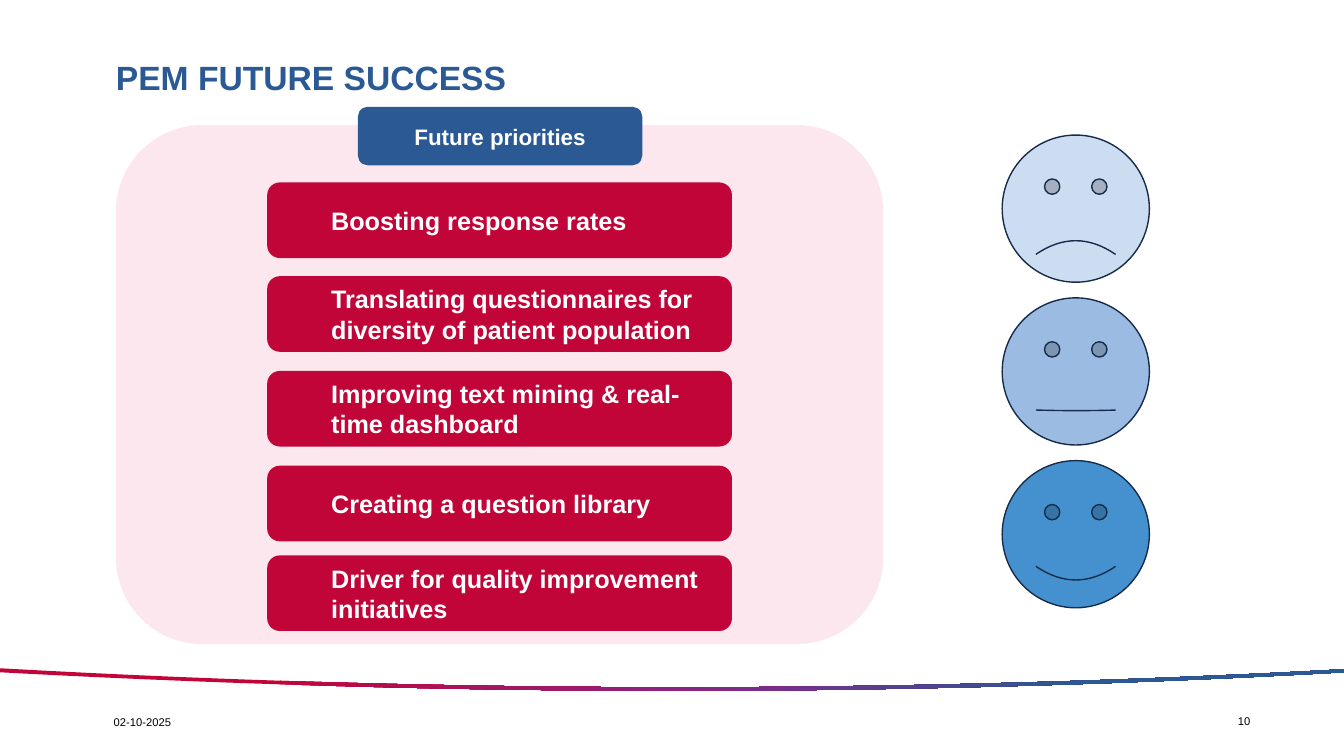
from copy import deepcopy

from pptx import Presentation, util as u
from pptx.dml.color import RGBColor
from pptx.enum import shapes, text

C = {"red": "C10538", "purple": "8C2383", "blue": "2B5993", "pink": "FBE7ED",
     "white": "FFFFFF", "black": "000000", "ink": "162C4A"}

prs = Presentation()
prs.slide_width, prs.slide_height = u.Inches(13.33), u.Inches(7.5)
s = prs.slides.add_slide(prs.slide_layouts[6])


def add_shape(kind, box, fill):
    sp = s.shapes.add_shape(kind, *map(u.Inches, box))
    sp.shadow.inherit = False
    sp.fill.solid()
    sp.fill.fore_color.rgb = RGBColor.from_string(fill)
    sp.line.fill.background()
    return sp


def write(sp, words, size, color, bold=False, anchor=text.MSO_ANCHOR.MIDDLE,
          align=text.PP_ALIGN.LEFT):
    tf = sp.text_frame
    tf.word_wrap = True
    tf.vertical_anchor = anchor
    p = tf.paragraphs[0]
    p.alignment = align
    r = p.add_run()
    r.text = words
    r.font.name, r.font.size, r.font.bold = "Arial", u.Pt(size), bold
    r.font.color.rgb = RGBColor.from_string(C[color])
    return p


# Footer wave: two cubic curves, there and back, sampled evenly
steps = 60
top, bottom = (6.63, 6.88, 6.88, 6.64), (6.67, 6.91, 6.92, 6.67)
edges = []
for a, b, c, d in (top, bottom):
    edge = []
    for i in range(steps + 1):
        t = i / steps
        y = a * (1 - t)**3 + 3 * b * t * (1 - t)**2 + 3 * c * t**2 * (1 - t) + d * t**3
        edge.append((u.Inches(13.33 * t), u.Inches(y)))
    edges.append(edge)
outline = edges[0] + edges[1][::-1]
fb = s.shapes.build_freeform(*outline[0])
fb.add_line_segments(outline[1:], close=True)
wave = fb.convert_to_shape()
wave.shadow.inherit = False
wave.line.fill.background()
wave.fill.gradient()
wave.fill.gradient_angle = 0
stops = wave._element.xpath(".//a:gsLst")[0]
stops.append(deepcopy(stops[0]))
for stop, share, name in zip(wave.fill.gradient_stops, (0.2, 0.5, 0.8),
                             ("red", "purple", "blue")):
    stop.position = share
    stop.color.rgb = RGBColor.from_string(C[name])

# Title and footer
title = s.shapes.add_textbox(*map(u.Inches, (1.15, 0.39, 11.42, 0.79)))
tf = title.text_frame
tf.margin_left = tf.margin_right = tf.margin_top = tf.margin_bottom = 0
write(title, "PEM FUTURE SUCCESS", 24, "blue", True).line_spacing = 0.9

for words, box in (("02-10-2025", (1.03, 7.05, 1.97, 0.24)),
                   ("10", (12.18, 7.04, 0.57, 0.24))):
    sp = s.shapes.add_textbox(*map(u.Inches, box))
    write(sp, words, 8, "black", anchor=text.MSO_ANCHOR.TOP)

# Priorities panel
rounded = shapes.MSO_SHAPE.ROUNDED_RECTANGLE
add_shape(rounded, (1.15, 1.24, 7.61, 5.15), C["pink"])
header = add_shape(rounded, (3.55, 1.06, 2.82, 0.58), C["blue"])
write(header, "Future priorities", 16, "white", True, align=text.PP_ALIGN.CENTER)

priorities = (
    (1.81, "Boosting response rates"),
    (2.74, "Translating questionnaires for diversity of patient population"),
    (3.68, "Improving text mining & real-time dashboard"),
    (4.62, "Creating a question library"),
    (5.51, "Driver for quality improvement initiatives"),
)
for y, words in priorities:
    sp = add_shape(rounded, (2.65, y, 4.61, 0.75), C["red"])
    p = write(sp, words, 18, "white", True)
    p.level = 1
    pPr = p._p.get_or_add_pPr()
    pPr.set("marL", str(u.Inches(0.5)))
    pPr.set("indent", "0")

# Faces from sad to happy
faces = (("CDDDF1", -0.047), ("9CBBE2", 0.002), ("4591D0", 0.04653))
for i, (fill, smile) in enumerate(faces):
    face = add_shape(shapes.MSO_SHAPE.SMILEY_FACE, (9.94, 1.34 + 1.615 * i, 1.46, 1.46), fill)
    face.adjustments[0] = smile
    face.line.color.rgb = RGBColor.from_string(C["ink"])
    face.line.width = u.Pt(1)

prs.save("out.pptx")
